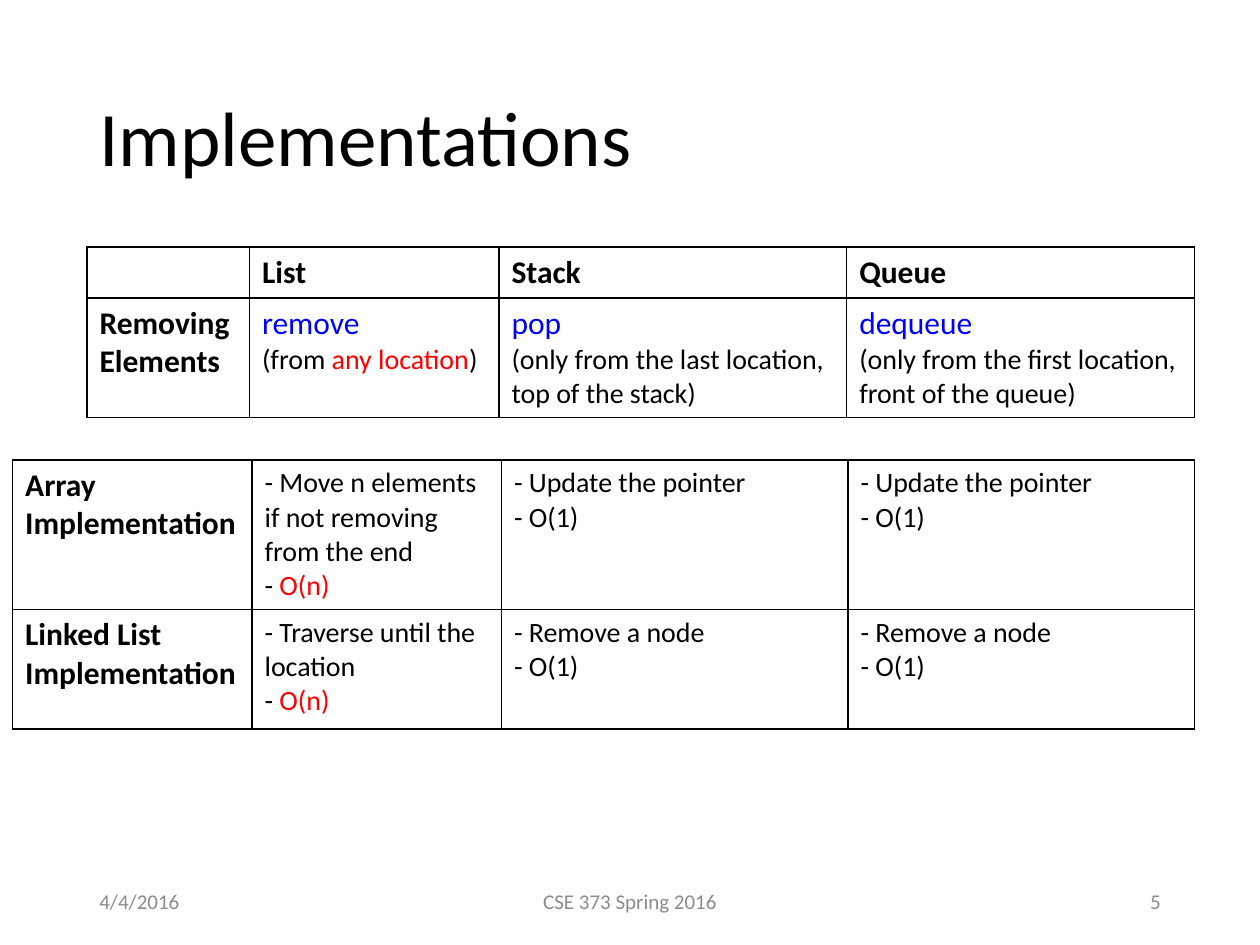
"""Build the slide comparing element removal in lists, stacks and queues."""
from lxml.etree import SubElement
from pptx import Presentation
from pptx.dml.color import RGBColor
from pptx.enum.text import MSO_ANCHOR as Anchor, PP_ALIGN as Align
from pptx.oxml.ns import qn
from pptx.util import Inches, Pt

BLACK = RGBColor(0, 0, 0)
BLUE = RGBColor(0, 0, 255)
RED = RGBColor(255, 0, 0)
GRAY = RGBColor(0x8C, 0x8C, 0x8C)
FONT = "Calibri"


def write(paragraph, text, size=16, color=BLACK, bold=False):
    run = paragraph.add_run()
    run.text = text
    run.font.name = FONT
    run.font.size = Pt(size)
    run.font.color.rgb = color
    run.font.bold = bold


def heading(*lines):
    return [[(line, {"size": 18, "bold": True})] for line in lines]


def plain(*lines):
    return [[(line, {})] for line in lines]


def operation(name):
    return [[(name, {"size": 18, "color": BLUE})]]


class SlideBuilder:
    def __init__(self, slide, border_color=BLACK, border_width=1):
        self.slide = slide
        self.border_color = border_color
        self.border_width = border_width

    def title(self, text, left, top, width, height):
        title = self.slide.shapes.title
        title.left, title.top = Inches(left), Inches(top)
        title.width, title.height = Inches(width), Inches(height)
        title.text_frame.vertical_anchor = Anchor.MIDDLE
        paragraph = title.text_frame.paragraphs[0]
        paragraph.alignment = Align.LEFT
        paragraph.line_spacing = 0.9
        write(paragraph, text, size=44)

    def footer(self, text, left, width, align):
        box = self.slide.shapes.add_textbox(
            Inches(left), Inches(6.95), Inches(width), Inches(0.4))
        frame = box.text_frame
        frame.word_wrap = True
        frame.vertical_anchor = Anchor.MIDDLE
        frame.paragraphs[0].alignment = align
        write(frame.paragraphs[0], text, size=12, color=GRAY)

    def table(self, left, top, widths, heights, rows):
        frame = self.slide.shapes.add_table(
            len(heights), len(widths), Inches(left), Inches(top),
            Inches(sum(widths)), Inches(sum(heights)))
        table = frame.table
        table.first_row = table.horz_banding = False
        for column, width in zip(table.columns, widths):
            column.width = Inches(width)
        for row, height, contents in zip(table.rows, heights, rows):
            row.height = Inches(height)
            for cell, lines in zip(row.cells, contents):
                self.cell(cell, lines)

    def cell(self, cell, lines):
        self.borders(cell)
        cell.fill.background()
        frame = cell.text_frame
        for index, runs in enumerate(lines):
            paragraph = frame.add_paragraph() if index else frame.paragraphs[0]
            for text, style in runs:
                write(paragraph, text, **style)

    def borders(self, cell):
        properties = cell._tc.get_or_add_tcPr()
        for side in ("a:lnL", "a:lnR", "a:lnT", "a:lnB"):
            line = SubElement(properties, qn(side), w=str(Pt(self.border_width)))
            fill = SubElement(line, qn("a:solidFill"))
            SubElement(fill, qn("a:srgbClr"), val=str(self.border_color))


def main():
    deck = Presentation()
    deck.slide_width, deck.slide_height = Inches(10), Inches(7.5)
    builder = SlideBuilder(deck.slides.add_slide(deck.slide_layouts[5]))
    builder.title("Implementations", 0.69, 0.4, 8.62, 1.45)

    any_location = [[("(from ", {}), ("any location", {"color": RED}), (")", {})]]
    linear_cost = [[("- ", {}), ("O(n)", {"color": RED})]]
    pointer_update = plain("- Update the pointer", "- O(1)")
    node_removal = plain("- Remove a node", "- O(1)")

    builder.table(0.69, 1.96, [1.29, 1.98, 2.76, 2.76], [0.4, 0.95], [
        [[], heading("List"), heading("Stack"), heading("Queue")],
        [heading("Removing Elements"),
         operation("remove") + any_location,
         operation("pop")
         + plain("(only from the last location,", "top of the stack)"),
         operation("dequeue")
         + plain("(only from the first location,", "front of the queue)")],
    ])
    builder.table(0.1, 3.65, [1.9, 1.98, 2.75, 2.75], [1.18, 0.95], [
        [heading("Array Implementation"),
         plain("- Move n elements if not removing from the end") + linear_cost,
         pointer_update, pointer_update],
        [heading("Linked List", "Implementation"),
         plain("- Traverse until the location") + linear_cost,
         node_removal, node_removal],
    ])

    builder.footer("4/4/2016", 0.69, 2.25, Align.LEFT)
    builder.footer("CSE 373 Spring 2016", 3.31, 3.38, Align.CENTER)
    builder.footer("5", 7.06, 2.25, Align.RIGHT)
    deck.save("out.pptx")


if __name__ == "__main__":
    main()
